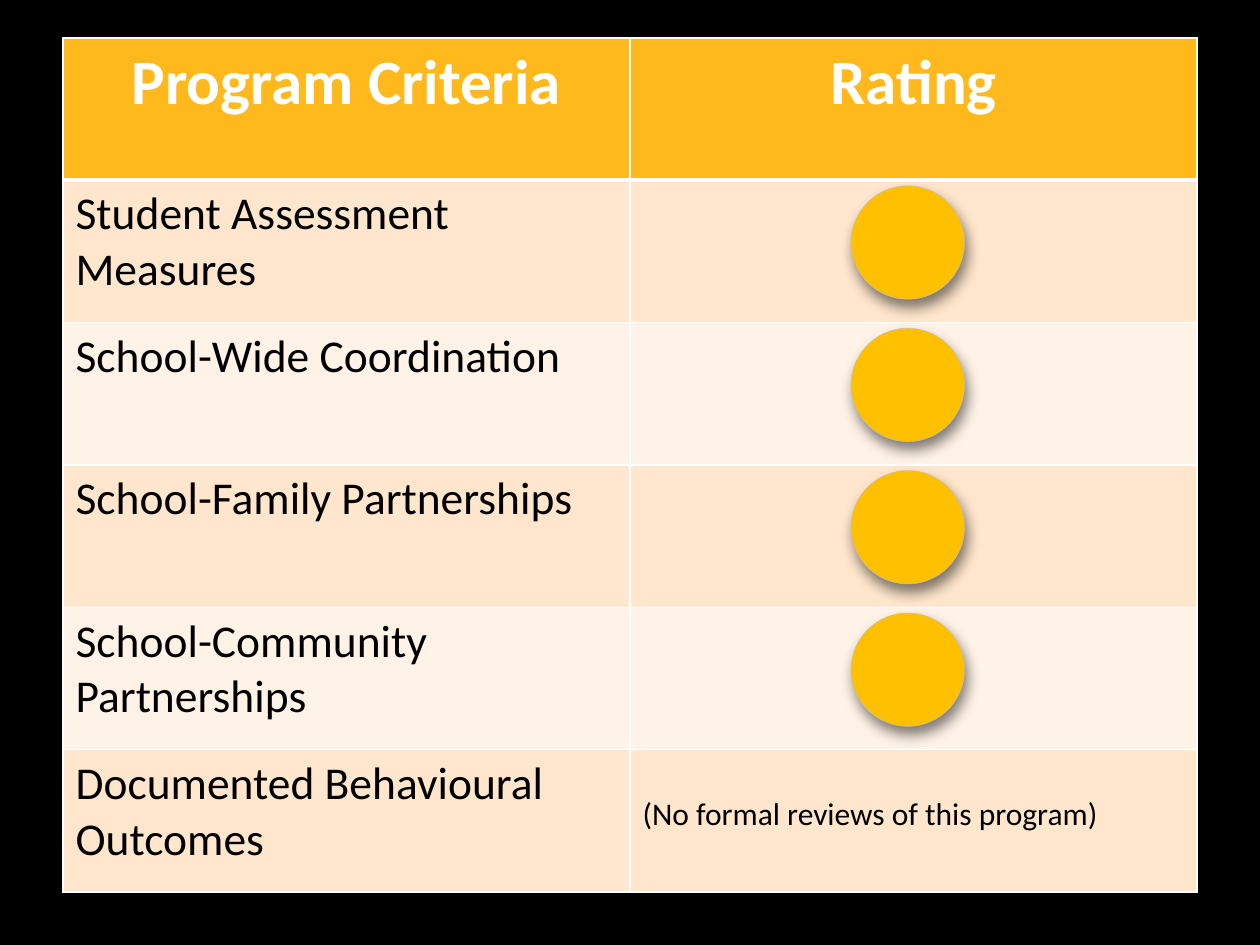
from pptx import Presentation
from pptx.dml.color import RGBColor
from pptx.enum.shapes import MSO_SHAPE as Shape
from pptx.enum.text import PP_ALIGN as Align
from pptx.oxml import parse_xml
from pptx.oxml.ns import nsdecls, qn
from pptx.util import Inches, Pt

BLACK = RGBColor(0x00, 0x00, 0x00)
WHITE = RGBColor(0xFF, 0xFF, 0xFF)
HEADER = RGBColor(0xFF, 0xB9, 0x1D)
BANDS = RGBColor(0xFF, 0xE6, 0xCC), RGBColor(0xFF, 0xF3, 0xE7)
AMBER = RGBColor(0xFF, 0xC0, 0x00)
GREY = RGBColor(0xBF, 0xBF, 0xBF)

HEAD_FONT = {"name": "Calibri", "size": Pt(36), "bold": True}
BODY_FONT = {"name": "Calibri", "size": Pt(26), "bold": False}
NOTE_FONT = {**BODY_FONT, "size": Pt(18)}

ROWS = [
    ("Program Criteria", "Rating"),
    ("Student Assessment Measures", ""),
    ("School-Wide Coordination", ""),
    ("School-Family Partnerships", ""),
    ("School-Community Partnerships", ""),
    ("Documented Behavioural Outcomes", "(No formal reviews of this program)"),
]


class RatingSlide:
    """A ratings table on a dark slide, laid out on a grid of columns and rows."""

    LEFT, TOP, COL, ROW = 0.5, 0.3, 4.5, 1.13

    def __init__(self, prs):
        self.s = prs.slides.add_slide(prs.slide_layouts[6])
        fill = self.s.background.fill
        fill.solid()
        fill.fore_color.rgb = BLACK

    def at(self, col, row):
        return Inches(self.LEFT + col * self.COL), Inches(self.TOP + row * self.ROW)

    def text(self, cell, text, font, color, align=Align.LEFT):
        p = cell.text_frame.paragraphs[0]
        p.alignment = align
        r = p.add_run()
        r.text = text
        for key, value in font.items():
            setattr(r.font, key, value)
        r.font.color.rgb = color

    def borders(self, cell, **widths):
        tcPr = cell._tc.get_or_add_tcPr()
        for i, side in enumerate("LRTB"):
            tcPr.insert(i, parse_xml(
                f'<a:ln{side} {nsdecls("a")} w="{Pt(widths.get(side, 1))}">'
                f'<a:solidFill><a:srgbClr val="{WHITE}"/></a:solidFill></a:ln{side}>'))

    def table(self, rows):
        n, m = len(rows), len(rows[0])
        size = Inches(m * self.COL), Inches(n * self.ROW)
        table = self.s.shapes.add_table(n, m, *self.at(0, 0), *size).table
        for i, row in enumerate(rows):
            table.rows[i].height = Inches(self.ROW)
            for j, text in enumerate(row):
                cell = table.cell(i, j)
                cell.fill.solid()
                cell.fill.fore_color.rgb = BANDS[(i - 1) % 2] if i else HEADER
                self.borders(cell, T=3 if i == 1 else 1, B=1 if i else 3)
                if i == 0:
                    self.text(cell, text, HEAD_FONT, WHITE, Align.CENTER)
                elif j == 0:
                    self.text(cell, text, BODY_FONT, BLACK)
                elif text:
                    cell.margin_top = Inches(0.36)
                    self.text(cell, text, NOTE_FONT, BLACK)

    def rating(self, row, diameter=0.2):
        d = Inches(diameter * self.COL)
        sp = self.s.shapes.add_shape(Shape.OVAL, *self.at(1.39, row + 0.04), d, d)
        sp.fill.solid()
        sp.fill.fore_color.rgb = AMBER
        sp.line.color.rgb = GREY
        sp.line.width = Pt(0.25)
        sp.shadow.inherit = False
        sp._element.spPr.find(qn("a:effectLst")).append(parse_xml(
            f'<a:outerShdw {nsdecls("a")} blurRad="{Pt(8)}" dist="{Pt(5)}" '
            f'dir="{70 * 60000}" rotWithShape="0"><a:srgbClr val="{BLACK}">'
            '<a:alpha val="50000"/></a:srgbClr></a:outerShdw>'))


def main():
    prs = Presentation()
    prs.slide_width, prs.slide_height = Inches(10), Inches(7.5)
    slide = RatingSlide(prs)
    slide.table(ROWS)
    for row in range(1, 5):
        slide.rating(row)
    prs.save("out.pptx")


if __name__ == "__main__":
    main()
